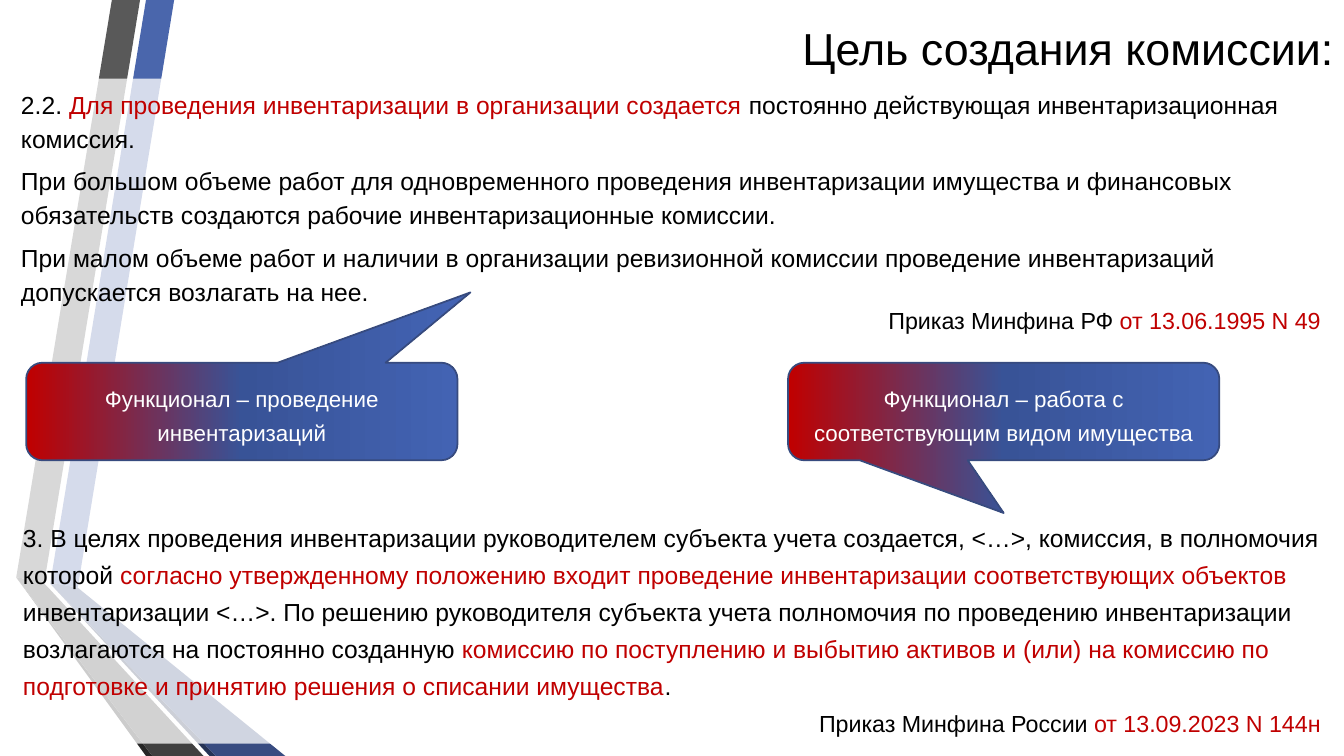
from lxml import etree
from pptx import Presentation
from pptx.dml.color import RGBColor
from pptx.enum.shapes import MSO_SHAPE
from pptx.enum.text import MSO_ANCHOR, PP_ALIGN
from pptx.oxml.ns import qn
from pptx.util import Cm, Pt

LEFT, CENTER, RIGHT = PP_ALIGN.LEFT, PP_ALIGN.CENTER, PP_ALIGN.RIGHT
TOP, MIDDLE = MSO_ANCHOR.TOP, MSO_ANCHOR.MIDDLE
RECTANGLE = MSO_SHAPE.RECTANGLE
CALLOUT = MSO_SHAPE.ROUNDED_RECTANGULAR_CALLOUT

FONT = "Arial"
COLORS = {
    "black": "000000",
    "white": "FFFFFF",
    "red": "C00000",
    "outline": "374B7F",
    "callout_middle": "385397",
    "callout_end": "4363B3",
    "blue": "4A66AC",
    "blue_dark": "384C81",
    "blue_edge": "253356",
    "gray": "595959",
    "gray_dark": "404040",
    "gray_edge": "262626",
}
RIBBONS = [
    ("blue", [(1.27, 14.68), (1.96, 14.81), (4.39, 0), (3.68, 0)]),
    ("gray", [(3.53, 0), (2.82, 0), (0.41, 14.55), (1.12, 14.66)]),
    ("gray_edge", [(0.41, 14.55), (3.68, 19.05), (3.84, 19.05)]),
    ("blue_edge", [(1.27, 14.71), (5.28, 19.05), (5.44, 19.05)]),
    ("blue_dark", [(1.27, 14.71), (5.44, 19.05), (7.19, 19.05), (1.96, 14.81), (1.27, 14.68)]),
    ("gray_dark", [(5.13, 19.05), (1.22, 14.81), (1.09, 14.68), (1.12, 14.66),
                   (0.41, 14.55), (3.84, 19.05)]),
]
COMMISSION_RULES = [
    [("2.2. ", "black"),
     ("Для проведения инвентаризации в организации создается ", "red"),
     ("постоянно действующая инвентаризационная комиссия.", "black")],
    [("При большом объеме работ для одновременного проведения инвентаризации имущества "
      "и финансовых обязательств создаются рабочие инвентаризационные комиссии.", "black")],
    [("При малом объеме работ и наличии в организации ревизионной комиссии проведение "
      "инвентаризаций допускается возлагать на нее.", "black")],
]
COMMISSION_POWERS = [
    ("3. В целях проведения инвентаризации руководителем субъекта учета создается, <…>, "
     "комиссия, в полномочия которой ", "black"),
    ("согласно утвержденному положению входит проведение инвентаризации "
     "соответствующих объектов ", "red"),
    ("инвентаризации <…>. По решению руководителя субъекта учета полномочия по проведению "
     "инвентаризации возлагаются на постоянно созданную ", "black"),
    ("комиссию по поступлению и выбытию активов и (или) на комиссию по подготовке "
     "и принятию решения о списании имущества", "red"),
    (".", "black"),
]
ORDER_1995 = [("Приказ Минфина РФ ", "black"), ("от 13.06.1995 N 49", "red")]
ORDER_2023 = [("Приказ Минфина России ", "black"), ("от 13.09.2023 N 144н", "red")]


def rgb(name):
    return RGBColor.from_string(COLORS[name])


def prepare_frame(shape, anchor):
    frame = shape.text_frame
    frame.word_wrap = True
    frame.vertical_anchor = anchor
    return frame


def write(frame, runs, size, align=LEFT, line_spacing=1.0, before=0, after=0, indent=0):
    paragraph = frame.paragraphs[0]
    if paragraph.runs:
        paragraph = frame.add_paragraph()
    paragraph.alignment = align
    paragraph.line_spacing = line_spacing
    paragraph.space_before = Pt(before)
    paragraph.space_after = Pt(after)
    if indent:
        paragraph._p.get_or_add_pPr().set("marL", str(Cm(indent)))
    for text, color in runs:
        run = paragraph.add_run()
        run.text = text
        run.font.name = FONT
        run.font.size = Pt(size)
        run.font.color.rgb = rgb(color)


def add_ribbon(slide, color, points):
    corners = [(Cm(x), Cm(y)) for x, y in points]
    builder = slide.shapes.build_freeform(*corners[0])
    builder.add_line_segments(corners[1:], close=True)
    shape = builder.convert_to_shape()
    shape.shadow.inherit = False
    shape.fill.solid()
    shape.fill.fore_color.rgb = rgb(color)
    shape.line.fill.background()


def add_title(slide, text):
    box = slide.shapes.add_textbox(Cm(0.97), Cm(0), Cm(32.9), Cm(1.75))
    write(prepare_frame(box, TOP), [(text, "black")], 32, align=RIGHT, line_spacing=1.3)


def add_panel(slide):
    panel = slide.shapes.add_shape(RECTANGLE, Cm(0.28), Cm(1.98), Cm(33.25), Cm(16.76))
    panel.shadow.inherit = False
    panel.fill.solid()
    panel.fill.fore_color.rgb = rgb("white")
    color = panel.fill._xPr.find(qn("a:solidFill"))[0]
    etree.SubElement(color, qn("a:alpha")).set("val", "77000")
    panel.line.fill.background()
    return prepare_frame(panel, MIDDLE)


def set_gradient(shape, stops):
    shape.fill.gradient()
    shape.fill.gradient_angle = 0
    stop_list = shape.fill._xPr.find(qn("a:gradFill")).find(qn("a:gsLst"))
    for stop in list(stop_list):
        stop_list.remove(stop)
    for position, color in stops:
        stop = etree.SubElement(stop_list, qn("a:gs"), pos=str(position * 1000))
        etree.SubElement(stop, qn("a:srgbClr"), val=COLORS[color])


def add_callout(slide, text, left, tip):
    callout = slide.shapes.add_shape(CALLOUT, Cm(left), Cm(9.14), Cm(10.87), Cm(2.46))
    callout.shadow.inherit = False
    callout.adjustments[0], callout.adjustments[1] = tip
    set_gradient(callout, [(0, "red"), (50, "callout_middle"), (100, "callout_end")])
    callout.line.color.rgb = rgb("outline")
    callout.line.width = Pt(1.25)
    write(prepare_frame(callout, MIDDLE), [(text, "white")], 16, align=CENTER, line_spacing=1.28)


def main():
    presentation = Presentation()
    presentation.slide_width, presentation.slide_height = Cm(33.87), Cm(19.05)
    slide = presentation.slides.add_slide(presentation.slide_layouts[6])

    for color, points in RIBBONS:
        add_ribbon(slide, color, points)
    add_title(slide, "Цель создания комиссии:")

    frame = add_panel(slide)
    for runs in COMMISSION_RULES:
        write(frame, runs, 17.6, line_spacing=1.15, before=6)
    write(frame, ORDER_1995, 16.6, align=RIGHT)
    write(frame, COMMISSION_POWERS, 17.6, line_spacing=1.25, before=130, after=6, indent=0.05)
    write(frame, ORDER_2023, 16.6, align=RIGHT, after=6)

    add_callout(slide, "Функционал – работа с соответствующим видом имущества", 19.86, (0, 1.04))
    add_callout(slide, "Функционал – проведение инвентаризаций", 0.66, (0.53, -1.22))
    presentation.save("out.pptx")


if __name__ == "__main__":
    main()
